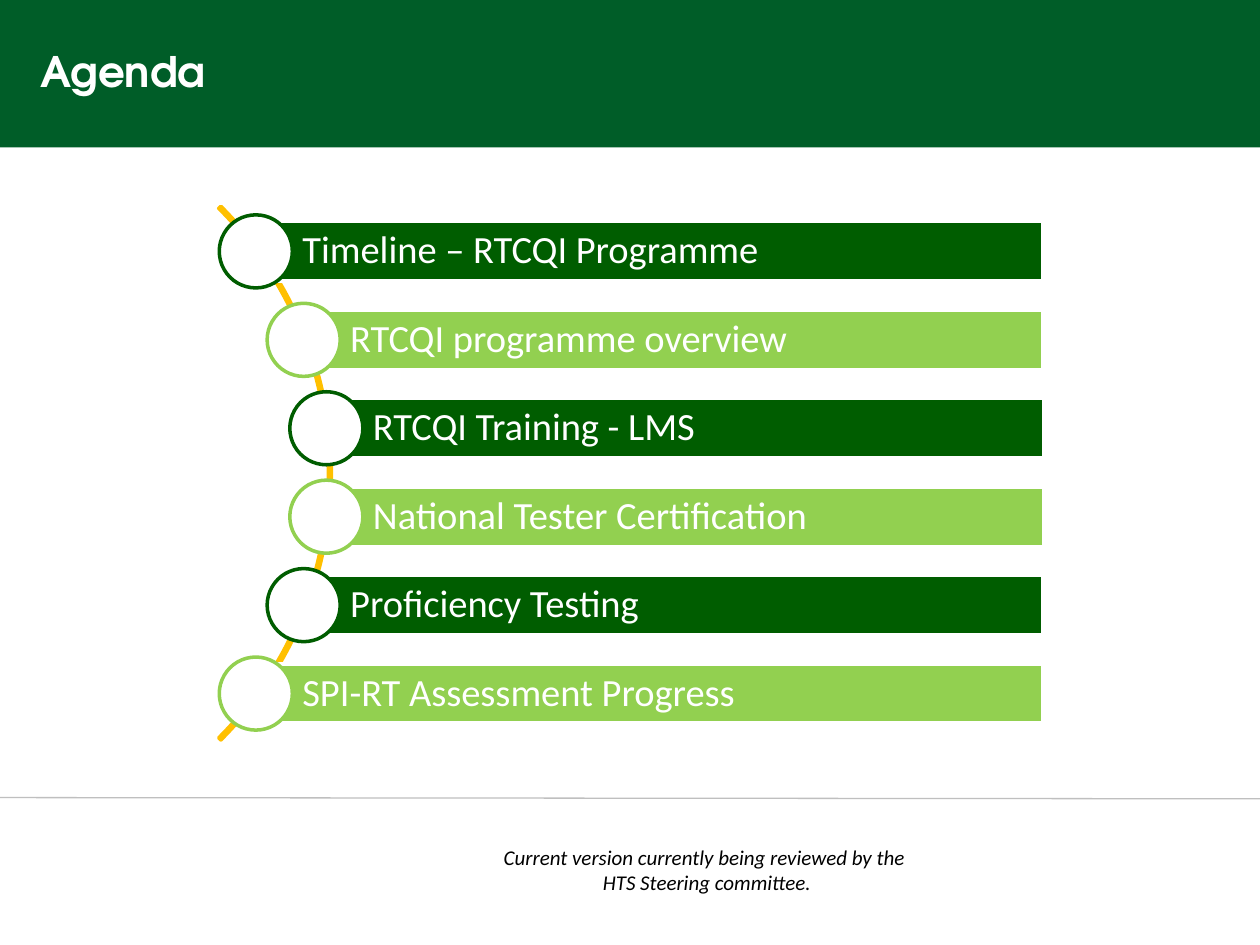
from lxml import etree
from pptx import Presentation
from pptx.dml.color import RGBColor
from pptx.enum import shapes, text
from pptx.oxml import ns
from pptx.util import Inches, Pt

WHITE = RGBColor(0xFF, 0xFF, 0xFF)
BLACK = RGBColor(0x00, 0x00, 0x00)
BANNER_GREEN = RGBColor(0x00, 0x5D, 0x28)
DARK_GREEN = RGBColor(0x00, 0x5D, 0x00)
LIGHT_GREEN = RGBColor(0x92, 0xD0, 0x50)
AMBER = RGBColor(0xFF, 0xC0, 0x00)
RULE_GREY = RGBColor(0xBF, 0xBF, 0xBF)

# Each agenda item with the left edge of its bar
AGENDA = [
    ("Timeline – RTCQI Programme", 2.03),
    ("RTCQI programme overview", 2.41),
    ("RTCQI Training - LMS", 2.59),
    ("National Tester Certification", 2.59),
    ("Proficiency Testing", 2.41),
    ("SPI-RT Assessment Progress", 2.03),
]
FIRST_TOP, LAST_TOP = 1.76, 5.27
BAR_RIGHT, BAR_HEIGHT = 8.28, 0.47
CIRCLE_SIZE = 0.58


def add_shape(slide, kind, left, top, width, height, fill=None, line=None):
    shape = slide.shapes.add_shape(
        kind, Inches(left), Inches(top), Inches(width), Inches(height))
    shape.shadow.inherit = False
    if fill is None:
        shape.fill.background()
    else:
        shape.fill.solid()
        shape.fill.fore_color.rgb = fill
    if line is None:
        shape.line.fill.background()
    else:
        shape.line.color.rgb = line
        shape.line.width = Pt(2)
    return shape


def write_text(shape, lines, *, size, color, font="Calibri", bold=False,
               italic=False, align=text.PP_ALIGN.LEFT, spacing=None,
               anchor=text.MSO_ANCHOR.MIDDLE, insets=(0.1, 0.05, 0.1, 0.05)):
    """Fill a shape with one paragraph per line; insets run left, top, right, bottom."""
    frame = shape.text_frame
    frame.word_wrap = True
    frame.vertical_anchor = anchor
    (frame.margin_left, frame.margin_top,
     frame.margin_right, frame.margin_bottom) = map(Inches, insets)
    frame.text = "\n".join(lines)
    for paragraph in frame.paragraphs:
        paragraph.alignment = align
        paragraph.line_spacing = spacing
        for run in paragraph.runs:
            run.font.name = font
            run.font.size = Pt(size)
            run.font.bold = bold
            run.font.italic = italic
            run.font.color.rgb = color


def add_text_box(slide, left, top, width, height, lines, **text_format):
    box = slide.shapes.add_textbox(
        Inches(left), Inches(top), Inches(width), Inches(height))
    write_text(box, lines, **text_format)


def add_rule(slide, start, end):
    rule = slide.shapes.add_connector(
        shapes.MSO_CONNECTOR.STRAIGHT, *map(Inches, start + end))
    rule.line.color.rgb = RULE_GREY
    rule.line.width = Pt(0.75)
    etree.SubElement(rule._element.spPr, ns.qn("a:effectLst"))


def add_arc(slide):
    arc = add_shape(slide, shapes.MSO_SHAPE.BLOCK_ARC,
                    -3.36, 0.76, 5.99, 5.99, line=AMBER)
    # Start and end angles (315 and 45 degrees), then thickness
    for index, value in enumerate((189, 27, 0.004)):
        arc.adjustments[index] = value


def add_agenda_item(slide, label, left, top, color):
    bar = add_shape(slide, shapes.MSO_SHAPE.RECTANGLE, left, top,
                    BAR_RIGHT - left, BAR_HEIGHT, fill=color, line=WHITE)
    write_text(bar, [label], size=22, color=WHITE, spacing=0.9,
               insets=(0.37, 0.06, 0.06, 0.06))
    add_shape(slide, shapes.MSO_SHAPE.OVAL, left - CIRCLE_SIZE / 2,
              top + (BAR_HEIGHT - CIRCLE_SIZE) / 2, CIRCLE_SIZE, CIRCLE_SIZE,
              fill=WHITE, line=color)


def main():
    presentation = Presentation()
    presentation.slide_width = Inches(10)
    presentation.slide_height = Inches(7.5)
    slide = presentation.slides.add_slide(presentation.slide_layouts[6])

    add_shape(slide, shapes.MSO_SHAPE.RECTANGLE, 0, 0, 10, 1.17, fill=BANNER_GREEN)
    add_rule(slide, (0, 6.33), (10, 6.34))
    add_text_box(slide, 0.22, 0.3, 7.84, 0.57, ["Agenda"], size=24, color=WHITE,
                 font="TeX Gyre Adventor", bold=True, spacing=0.9)
    add_text_box(slide, 3.88, 6.65, 3.46, 0.5,
                 ["Current version currently being reviewed by the ",
                  "HTS Steering committee."],
                 size=12, color=BLACK, italic=True,
                 align=text.PP_ALIGN.CENTER, anchor=text.MSO_ANCHOR.TOP)

    add_arc(slide)
    pitch = (LAST_TOP - FIRST_TOP) / (len(AGENDA) - 1)
    for index, (label, left) in enumerate(AGENDA):
        color = LIGHT_GREEN if index % 2 else DARK_GREEN
        add_agenda_item(slide, label, left, FIRST_TOP + index * pitch, color)

    presentation.save("out.pptx")


if __name__ == "__main__":
    main()
